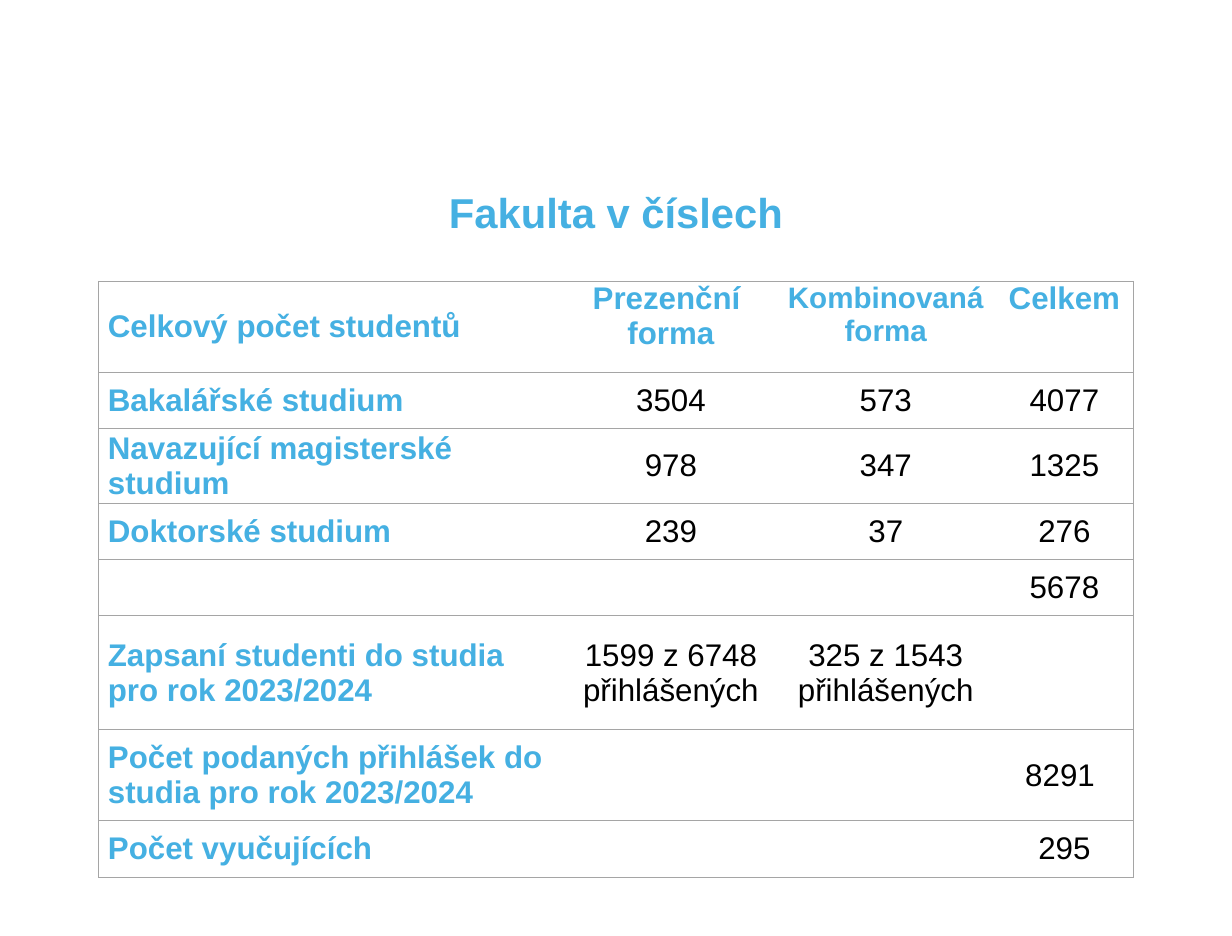
from lxml import etree
from pptx import Presentation
from pptx.dml.color import RGBColor
from pptx.enum.text import MSO_ANCHOR, PP_ALIGN
from pptx.oxml.ns import qn
from pptx.util import Cm, Pt

LEFT, MID = PP_ALIGN.LEFT, PP_ALIGN.CENTER
TOP, CENTRE = MSO_ANCHOR.TOP, MSO_ANCHOR.MIDDLE
BLUE, BLACK, GREY = "45B0E2", "000000", "A5A5A5"
WIDTHS = [9.48, 4.27, 4.45, 2.8]
HEIGHTS = [1.85, 1.14, 1.14, 1.14, 1.14, 2.31, 1.85, 1.14]
ROWS = [
    ["Celkový počet studentů", "Prezenční \nforma", "Kombinovaná forma", "Celkem"],
    ["Bakalářské studium", "3504", "573", "4077"],
    ["Navazující magisterské studium", "978", "347", "1325"],
    ["Doktorské studium", "239", "37", "276"],
    ["", "", "", "5678"],
    ["Zapsaní studenti do studia\npro rok 2023/2024",
     "1599 z 6748 přihlášených", "325 z 1543 přihlášených", ""],
    ["Počet podaných přihlášek do studia pro rok 2023/2024", "", "", "8291 "],
    ["Počet vyučujících", "", "", "295"],
]


def paint(text):
    """Turn a hex string into a colour."""
    return RGBColor.from_string(text)


def write(frame, text, size, color, bold, align):
    """Fill a text frame, one paragraph per line of text."""
    for i, line in enumerate(text.split("\n")):
        para = frame.add_paragraph() if i else frame.paragraphs[0]
        para.alignment = align
        run = para.add_run()
        run.text = line
        font = run.font
        font.name, font.size, font.bold = "Arial", Pt(size), bold
        font.color.rgb = paint(color)


def edge(cell, sides):
    """Draw grey lines on the given sides of a cell and clear the rest."""
    props = cell._tc.get_or_add_tcPr()
    for i, side in enumerate("LRTB"):
        line = etree.Element(qn("a:ln" + side), w=str(Pt(0.5)))
        if side in sides:
            fill = etree.SubElement(line, qn("a:solidFill"))
            etree.SubElement(fill, qn("a:srgbClr"), val=GREY)
        else:
            etree.SubElement(line, qn("a:noFill"))
        props.insert(i, line)


def add_title(slide, x, y, w, h):
    """Place the centred slide title."""
    frame = slide.shapes.add_textbox(Cm(x), Cm(y), Cm(w), Cm(h)).text_frame
    frame.word_wrap = True
    frame.margin_left = frame.margin_right = 0
    frame.margin_top = frame.margin_bottom = 0
    write(frame, "Fakulta v číslech", 24, BLUE, True, MID)
    frame.paragraphs[0].line_spacing = 0.9


def add_stats(slide, x, y, w, h):
    """Place the table of student numbers."""
    table = slide.shapes.add_table(
        len(ROWS), len(WIDTHS), Cm(x), Cm(y), Cm(w), Cm(h)).table
    table.first_row = table.horz_banding = False
    for col, width in zip(table.columns, WIDTHS):
        col.width = Cm(w * width / sum(WIDTHS))
    for row, height in zip(table.rows, HEIGHTS):
        row.height = Cm(h * height / sum(HEIGHTS))
    last = len(WIDTHS) - 1
    for r, texts in enumerate(ROWS):
        for c, text in enumerate(texts):
            cell = table.cell(r, c)
            cell.fill.background()
            edge(cell, "TB" + ("L" if c == 0 else "R" if c == last else ""))
            if not text:
                continue
            cell.margin_left = cell.margin_right = Cm(0.19)
            cell.margin_top = cell.margin_bottom = 0
            cell.vertical_anchor = TOP if r == 0 and c else CENTRE
            head = r == 0 or c == 0
            write(cell.text_frame, text, 17 if (r, c) == (0, 2) else 18,
                  BLUE if head else BLACK, head, MID if c else LEFT)


def main():
    """Build and save the slide."""
    deck = Presentation()
    deck.slide_width, deck.slide_height = Cm(25), Cm(19)
    slide = deck.slides.add_slide(deck.slide_layouts[6])
    add_title(slide, 2, 3.91, 21, 2.67)
    add_stats(slide, 2, 5.71, sum(WIDTHS), sum(HEIGHTS))
    deck.save("out.pptx")


if __name__ == "__main__":
    main()
